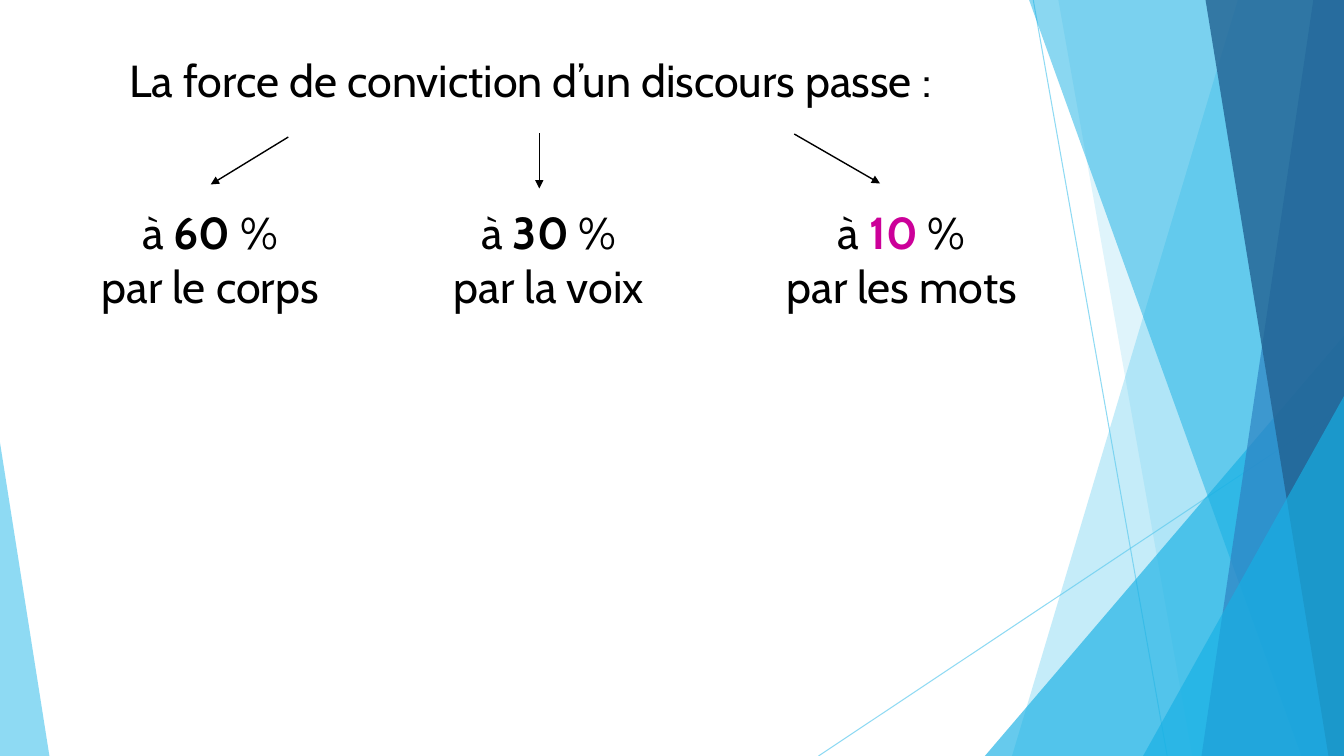
import pptx
import pptx.dml.color
import pptx.enum.shapes
import pptx.enum.text
import pptx.oxml
import pptx.oxml.ns
import pptx.util

SKY, AZURE, BLUE, NAVY = "5FCBEF", "17B0E4", "2E83C3", "226292"
BLACK, MAGENTA = "000000", "CC0099"


def paint(color_format, color):
    color_format.rgb = pptx.dml.color.RGBColor.from_string(color)


def add_xml(parent, tag, **attributes):
    child = parent.makeelement(pptx.oxml.ns.qn("a:" + tag),
                               {key: str(value) for key, value in attributes.items()})
    parent.append(child)


def fade(shape, opacity):
    """Give the colours of a shape an opacity in percent."""
    if opacity < 100:
        for tone in shape._element.spPr.iter(pptx.oxml.ns.qn("a:srgbClr")):
            add_xml(tone, "alpha", val=opacity * 1000)


def add_run(paragraph, wording, font="Cabin", size=32, color=BLACK, bold=False):
    run = paragraph.add_run()
    run.text = wording
    run.font.name = font
    run.font.size = pptx.util.Pt(size)
    run.font.bold = bold
    paint(run.font.color, color)


class SlideMaker:
    """Draws on one slide; every length is a percentage of the slide's size."""

    def __init__(self, deck):
        self.width, self.height = deck.slide_width, deck.slide_height
        self.slide = deck.slides.add_slide(deck.slide_layouts[5])
        self.shapes = self.slide.shapes

    def x(self, share):
        return round(self.width * share / 100)

    def y(self, share):
        return round(self.height * share / 100)

    def box(self, left, top, width, height):
        return self.x(left), self.y(top), self.x(width), self.y(height)

    def fill(self, shape, color, opacity):
        shape.shadow.inherit = False
        shape.line.fill.background()
        shape.fill.solid()
        paint(shape.fill.fore_color, color)
        fade(shape, opacity)

    def ribbon(self, top_x, bottom_x, color, opacity):
        """Fill from a slanted left edge to the right side of the slide."""
        outline = self.shapes.build_freeform(self.x(top_x), 0)
        outline.add_line_segments([(self.width, 0), (self.width, self.height),
                                   (self.x(bottom_x), self.height)])
        self.fill(outline.convert_to_shape(), color, opacity)

    def corner(self, left, top, width, apex, color, opacity):
        """Triangle standing on the bottom edge of the slide."""
        triangle = self.shapes.add_shape(
            pptx.enum.shapes.MSO_SHAPE.ISOSCELES_TRIANGLE,
            *self.box(left, top, width, 100 - top))
        triangle.adjustments[0] = apex
        self.fill(triangle, color, opacity)

    def line(self, start, end, color=BLACK, weight=1, opacity=100, arrow=False):
        connector = self.shapes.add_connector(
            pptx.enum.shapes.MSO_CONNECTOR.STRAIGHT,
            self.x(start[0]), self.y(start[1]), self.x(end[0]), self.y(end[1]))
        connector.line.width = pptx.util.Pt(weight)
        connector.line.fill.solid()
        paint(connector.line.fill.fore_color, color)
        fade(connector, opacity)
        if arrow:
            add_xml(connector.line._get_or_add_ln(), "tailEnd", type="triangle")
        add_xml(connector._element.spPr, "effectLst")

    def set_lines(self, holder, lines):
        """Fill a text holder; each line is a list of (wording, format) pairs."""
        frame = holder.text_frame
        frame.word_wrap = True
        frame.auto_size = pptx.enum.text.MSO_AUTO_SIZE.NONE
        frame.vertical_anchor = pptx.enum.text.MSO_ANCHOR.TOP
        for number, line in enumerate(lines):
            paragraph = frame.add_paragraph() if number else frame.paragraphs[0]
            paragraph.alignment = pptx.enum.text.PP_ALIGN.CENTER
            for wording, style in line:
                add_run(paragraph, wording, **style)

    def title(self, wording, *place):
        heading = self.shapes.title
        heading.left, heading.top, heading.width, heading.height = self.box(*place)
        self.set_lines(heading, [[(wording, {})]])

    def text(self, lines, *place):
        self.set_lines(self.shapes.add_textbox(*self.box(*place)), lines)


def main():
    deck = pptx.Presentation()
    deck.slide_width = pptx.util.Inches(13.333)
    deck.slide_height = pptx.util.Inches(7.5)
    speech = SlideMaker(deck)

    # Background facets
    speech.line((76.88, 0), (86.85, 100), SKY, 0.75, 70)
    speech.line((100, 53.73), (60.9, 100), SKY, 0.75, 70)
    speech.ribbon(92.1, 75.3, SKY, 36)
    speech.ribbon(78.75, 88.72, SKY, 20)
    speech.corner(73.28, 44.4, 26.72, 1, AZURE, 66)
    speech.ribbon(76.57, 96.82, AZURE, 50)
    speech.ribbon(97.72, 89.4, BLUE, 70)
    speech.ribbon(89.7, 98.85, NAVY, 80)
    speech.corner(85.05, 52.4, 14.95, 1, AZURE, 66)
    speech.corner(0, 58.53, 3.68, 0, SKY, 70)

    # Title
    speech.title("La force de conviction d’un discours passe :", 2.4, 6.27, 74.18, 8.53)

    # The three channels, each with its arrow
    channels = [
        ("60", "par le corps", BLACK, 1.73, (21.45, 18.13), (15.68, 24.4)),
        ("30", "par la voix", BLACK, 26.93, (40.13, 17.6), (40.13, 24.93)),
        ("10", "par les mots", MAGENTA, 53.18, (59.1, 17.73), (65.48, 24.27)),
    ]
    for share, channel, color, left, start, end in channels:
        speech.line(start, end, arrow=True)
        figure = [("à ", {}), (share, {"bold": True, "color": color}), (" %", {})]
        speech.text([figure, [(channel, {})]], left, 26.4, 27.83, 15.73)

    deck.save("out.pptx")


if __name__ == "__main__":
    main()
